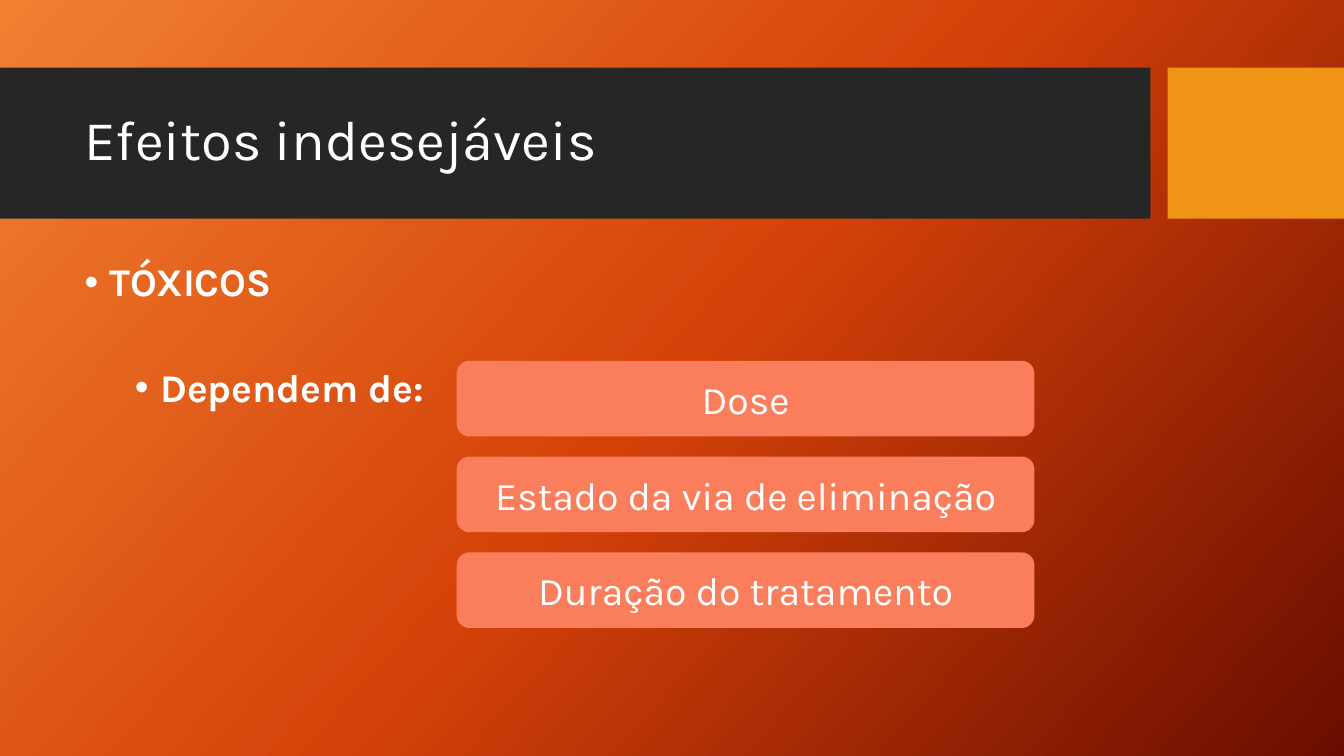
from dataclasses import dataclass

from lxml import etree
from pptx import Presentation
from pptx import util as u
from pptx.dml.color import RGBColor
from pptx.enum import shapes, text
from pptx.oxml.ns import qn


@dataclass(frozen=True)
class Theme:
    font: str = "Karla"
    white: str = "FFFFFF"
    band: str = "262626"
    accent: str = "F09415"
    card: str = "FA7E5C"
    glow: tuple = ((0, "F18031"), (50, "D54209"), (100, "6A0D00"))
    angle: int = 42
    head: int = 40
    body: int = 28


THEME = Theme()


def paint(slide):
    """Fill the background with the diagonal gradient."""
    fill = slide.background.fill
    fill.gradient()
    grad = slide.background._cSld.find(".//" + qn("a:gradFill"))
    stops = grad.find(qn("a:gsLst"))
    for old in list(stops):
        stops.remove(old)
    for pos, color in THEME.glow:
        stop = etree.SubElement(stops, qn("a:gs"), pos=str(pos * 1000))
        etree.SubElement(stop, qn("a:srgbClr"), val=color)
    grad.find(qn("a:lin")).set("ang", str(THEME.angle * 60000))


def style(para, size, bold=False):
    for run in para.runs:
        font = run.font
        font.name, font.size, font.bold = THEME.font, u.Pt(size), bold
        font.color.rgb = RGBColor.from_string(THEME.white)


def block(slide, kind, box, color):
    """Add a plain filled shape."""
    shape = slide.shapes.add_shape(kind, *map(u.Inches, box))
    shape.shadow.inherit = False
    shape.fill.solid()
    shape.fill.fore_color.rgb = RGBColor.from_string(color)
    shape.line.fill.background()
    return shape


def label(slide, box):
    """Add an empty wrapping text box."""
    frame = slide.shapes.add_textbox(*map(u.Inches, box)).text_frame
    frame.word_wrap = True
    return frame


def header(slide, box, title):
    """Dark title band with an accent block at its right."""
    left, top, width, height = box
    band, gap = 11.41, 0.17
    rect = shapes.MSO_SHAPE.RECTANGLE
    block(slide, rect, (left, top, band, height), THEME.band)
    side = left + band + gap
    block(slide, rect, (side, top, left + width - side, height), THEME.accent)
    frame = label(slide, (left + 0.74, top + 0.15, 10.51, 1.18))
    frame.vertical_anchor = text.MSO_ANCHOR.MIDDLE
    frame.text = title
    para = frame.paragraphs[0]
    para.line_spacing = 0.9
    style(para, THEME.head)


def bullets(slide, box, items):
    """Bulleted list of (text, level, space before)."""
    frame = label(slide, box)
    frame.text = "\n".join(item[0] for item in items)
    for para, (_, level, space) in zip(frame.paragraphs, items):
        para.level = level
        props = para._p.get_or_add_pPr()
        props.set("marL", str(u.Inches(0.25 + 0.5 * level)))
        props.set("indent", str(u.Inches(-0.25)))
        etree.SubElement(props, qn("a:buFont"), typeface="Arial")
        etree.SubElement(props, qn("a:buChar"), char="•")
        para.line_spacing = 0.9
        if space:
            para.space_before = u.Pt(space)
        style(para, THEME.body, bold=True)


def cards(slide, box, names):
    """Stack of rounded cards, evenly spread over the box."""
    left, top, width, height = box
    tall = 0.75
    step = (height - tall) / (len(names) - 1)
    for row, name in enumerate(names):
        card = block(slide, shapes.MSO_SHAPE.ROUNDED_RECTANGLE,
                     (left, top + row * step, width, tall), THEME.card)
        frame = card.text_frame
        frame.vertical_anchor = text.MSO_ANCHOR.MIDDLE
        frame.text = name
        para = frame.paragraphs[0]
        para.alignment = text.PP_ALIGN.CENTER
        style(para, THEME.body)


def main():
    deck = Presentation()
    deck.slide_width, deck.slide_height = u.Inches(13.33), u.Inches(7.5)
    slide = deck.slides.add_slide(deck.slide_layouts[6])
    paint(slide)
    header(slide, (0, 0.67, 13.33, 1.5), "Efeitos indesejáveis")
    bullets(slide, (0.74, 2.56, 10.51, 3.94),
            [("TÓXICOS", 0, 0), ("Dependem de:", 1, 45)])
    cards(slide, (4.53, 3.58, 5.73, 2.65),
          ["Dose", "Estado da via de eliminação", "Duração do tratamento"])
    deck.save("out.pptx")


if __name__ == "__main__":
    main()
